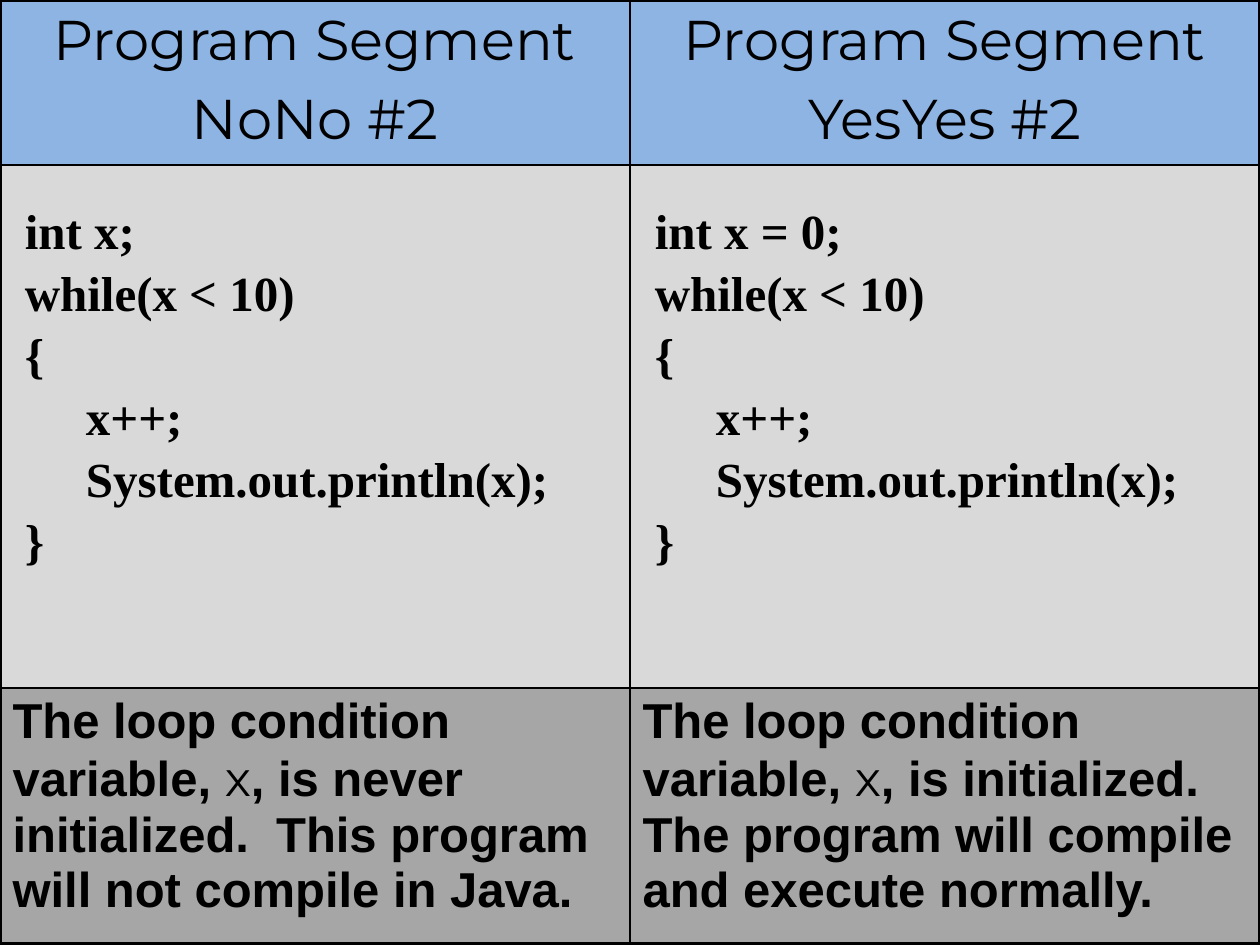
from dataclasses import dataclass

import lxml.etree
import pptx
import pptx.dml.color
import pptx.enum.text
import pptx.oxml.ns
import pptx.util


@dataclass(frozen=True)
class Theme:
    ink: str = "000000"
    heading_fill: str = "8EB4E3"
    code_fill: str = "D9D9D9"
    remark_fill: str = "A6A6A6"
    heading_font: str = "Montserrat"
    code_font: str = "Times New Roman"
    remark_font: str = "Arial"
    heading_size: float = 32
    body_size: float = 28
    heading_gap: float = 6.1
    code_gap: float = 4.5
    outer_line: float = 2.25
    inner_line: float = 1


THEME = Theme()
WIDTH, HEIGHT = 10, 7.5
ROW_HEIGHTS = (1.31, 4.15, 2.03)
CODE_TOP_MARGIN = 0.32

LOOP = (" while(x < 10)", " {", "      x++;", "      System.out.println(x);", " }")
SEGMENTS = (
    (
        ("Program Segment", "NoNo #2"),
        (" int x;", *LOOP),
        ", is never initialized.  This program will not compile in Java.",
    ),
    (
        ("Program Segment", "YesYes #2"),
        (" int x = 0;", *LOOP),
        ", is initialized.  The program will compile and execute normally.",
    ),
)


def style_font(font, name, size, bold=False):
    font.name = name
    font.size = pptx.util.Pt(size)
    font.bold = bold
    font.color.rgb = pptx.dml.color.RGBColor.from_string(THEME.ink)


def fill_cell(cell, color):
    cell.fill.solid()
    cell.fill.fore_color.rgb = pptx.dml.color.RGBColor.from_string(color)


def set_borders(cell, widths):
    """Draw the left, right, top and bottom borders, widths in points."""
    qn = pptx.oxml.ns.qn
    properties = cell._tc.get_or_add_tcPr()
    for index, (side, width) in enumerate(zip("LRTB", widths)):
        line = lxml.etree.Element(qn(f"a:ln{side}"), w=str(int(pptx.util.Pt(width))))
        solid = lxml.etree.SubElement(line, qn("a:solidFill"))
        lxml.etree.SubElement(solid, qn("a:srgbClr"), val=THEME.ink)
        properties.insert(index, line)


def write_lines(cell, lines, gap):
    """Write one paragraph per line and return the paragraphs."""
    frame = cell.text_frame
    for index, line in enumerate(lines):
        para = frame.add_paragraph() if index else frame.paragraphs[0]
        para.add_run().text = line
        if index:
            para.space_before = pptx.util.Pt(gap)
    return frame.paragraphs


def write_heading(cell, lines):
    fill_cell(cell, THEME.heading_fill)
    for para in write_lines(cell, lines, THEME.heading_gap):
        para.alignment = pptx.enum.text.PP_ALIGN.CENTER
        style_font(para.font, THEME.heading_font, THEME.heading_size)


def write_code(cell, lines):
    fill_cell(cell, THEME.code_fill)
    cell.margin_top = pptx.util.Inches(CODE_TOP_MARGIN)
    for para in write_lines(cell, lines, THEME.code_gap):
        style_font(para.font, THEME.code_font, THEME.body_size, bold=True)


def write_remark(cell, ending):
    fill_cell(cell, THEME.remark_fill)
    para = cell.text_frame.paragraphs[0]
    for text, name, bold in (
        ("The loop condition variable, ", THEME.remark_font, True),
        ("x", THEME.heading_font, False),
        (ending, THEME.remark_font, True),
    ):
        span = para.add_run()
        span.text = text
        style_font(span.font, name, THEME.body_size, bold)


def add_comparison(page):
    row_count, column_count = len(ROW_HEIGHTS), len(SEGMENTS)
    table = page.shapes.add_table(
        row_count, column_count, 0, 0,
        pptx.util.Inches(WIDTH), pptx.util.Inches(sum(ROW_HEIGHTS)),
    ).table
    for row, height in zip(table.rows, ROW_HEIGHTS):
        row.height = pptx.util.Inches(height)
    writers = (write_heading, write_code, write_remark)
    for column, segment in enumerate(SEGMENTS):
        for row, (write, content) in enumerate(zip(writers, segment)):
            cell = table.cell(row, column)
            write(cell, content)
            on_edge = (column == 0, column == column_count - 1,
                       row == 0, row == row_count - 1)
            set_borders(cell, [THEME.outer_line if edge else THEME.inner_line
                               for edge in on_edge])


def main():
    deck = pptx.Presentation()
    deck.slide_width = pptx.util.Inches(WIDTH)
    deck.slide_height = pptx.util.Inches(HEIGHT)
    page = deck.slides.add_slide(deck.slide_layouts[6])
    add_comparison(page)
    deck.save("out.pptx")


if __name__ == "__main__":
    main()
